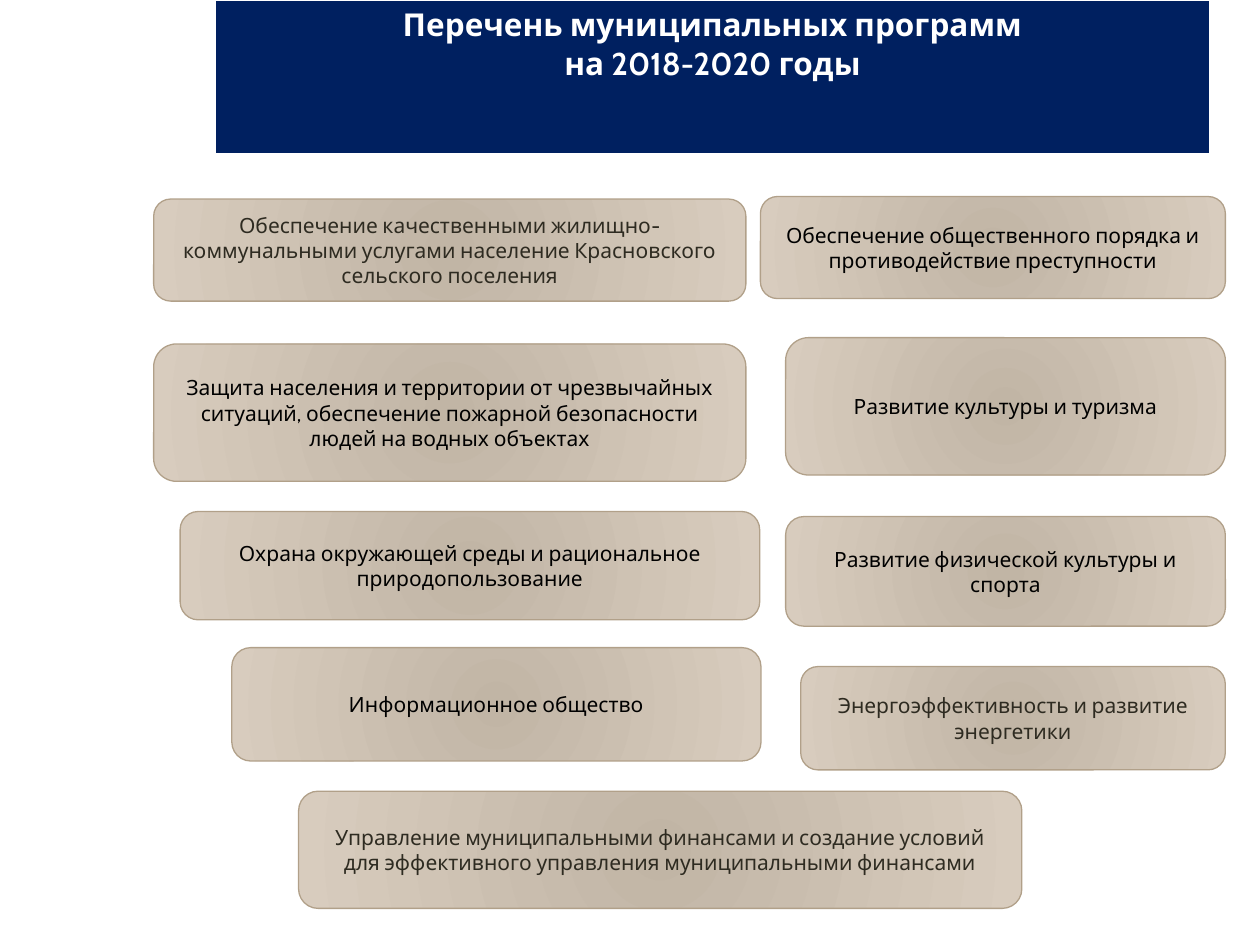
from lxml import etree
from pptx import Presentation
from pptx.dml.color import RGBColor
from pptx.enum.shapes import MSO_SHAPE
from pptx.enum.text import MSO_ANCHOR, PP_ALIGN
from pptx.oxml import parse_xml
from pptx.oxml.ns import nsdecls, qn
from pptx.util import Inches, Pt

ROUNDED = MSO_SHAPE.ROUNDED_RECTANGLE
MIDDLE = MSO_ANCHOR.MIDDLE
CENTER = PP_ALIGN.CENTER

NAVY = RGBColor(0x00, 0x20, 0x60)
WHITE = RGBColor(0xFF, 0xFF, 0xFF)
BLACK = RGBColor(0x00, 0x00, 0x00)
BROWN = RGBColor(0x2E, 0x2B, 0x21)
SAND_DARK = RGBColor(0xC1, 0xB5, 0xA5)
SAND_LIGHT = RGBColor(0xD8, 0xCC, 0xBE)
SAND_EDGE = RGBColor(0xB1, 0xA0, 0x89)

COLS, ROWS = 100, 75
FONT = "Cabin"
HEADING = "Перечень муниципальных программ\nна 2018-2020 годы"
LEFT_PROGRAMS = [
    (12.2, 15.8, 47, 8.1, BROWN, "Обеспечение качественными жилищно-коммунальными услугами "
     "население Красновского сельского поселения"),
    (12.2, 27.3, 47, 10.9, BLACK, "Защита населения и территории от чрезвычайных ситуаций, "
     "обеспечение пожарной безопасности людей на водных объектах"),
    (14.3, 40.6, 46, 8.6, BLACK, "Охрана окружающей среды и рациональное природопользование"),
    (18.4, 51.4, 42, 9, BLACK, "Информационное общество"),
]
RIGHT_EDGE = 97.25
RIGHT_PROGRAMS = [
    (15.6, 36.9, 8.1, BLACK, "Обеспечение общественного порядка и противодействие преступности"),
    (26.8, 34.9, 10.9, BLACK, "Развитие культуры и туризма"),
    (41, 34.9, 8.7, BLACK, "Развитие физической культуры и спорта"),
    (52.9, 33.7, 8.2, BROWN, "Энергоэффективность и развитие энергетики"),
]
FINANCE = (23.7, 62.8, 57.4, 9.3, BROWN, "Управление муниципальными финансами и создание условий "
           "для эффективного управления муниципальными финансами")


class Deck:
    """Holds the style and the current slide, measured on a grid of COLS by ROWS."""

    def __init__(self):
        self.prs = Presentation()
        self.prs.slide_width, self.prs.slide_height = Inches(10), Inches(7.5)
        self.s = self.prs.slides.add_slide(self.prs.slide_layouts[6])

    def box(self, x, y, w, h):
        col, row = self.prs.slide_width / COLS, self.prs.slide_height / ROWS
        return round(x * col), round(y * row), round(w * col), round(h * row)

    def set_text(self, tf, text, size, color, bold=False):
        tf.text = text
        for p in tf.paragraphs:
            p.alignment = CENTER
            for r in p.runs:
                r.font.name, r.font.size, r.font.bold = FONT, Pt(size), bold
                r.font.color.rgb = color

    def banner(self, x, y, w, h, text):
        table = self.s.shapes.add_table(1, 1, *self.box(x, y, w, h)).table
        cell = table.cell(0, 0)
        self.set_text(cell.text_frame, text, 18, WHITE, True)
        cell.fill.solid()
        cell.fill.fore_color.rgb = NAVY
        tc_pr = cell._tc.get_or_add_tcPr()
        for i, (side, width) in enumerate((("L", 1), ("R", 1), ("T", 1), ("B", 3))):
            tc_pr.insert(i, parse_xml(
                f'<a:ln{side} {nsdecls("a")} w="{Pt(width)}"><a:solidFill>'
                f'<a:srgbClr val="{WHITE}"/></a:solidFill></a:ln{side}>'))

    def program(self, x, y, w, h, color, text):
        sp = self.s.shapes.add_shape(ROUNDED, *self.box(x, y, w, h))
        sp.shadow.inherit = False
        sp.line.color.rgb, sp.line.width = SAND_EDGE, Pt(0.75)
        self.radial_fill(sp)
        sp.text_frame.vertical_anchor = MIDDLE
        self.set_text(sp.text_frame, text, 12, color)

    def radial_fill(self, sp):
        sp.fill.gradient()
        for i, (stop, color) in enumerate(zip(sp.fill.gradient_stops, (SAND_DARK, SAND_LIGHT))):
            stop.position, stop.color.rgb = i, color
        grad = sp._element.spPr.find(qn("a:gradFill"))
        grad.remove(grad.find(qn("a:lin")))
        circle = etree.SubElement(grad, qn("a:path"), {"path": "circle"})
        etree.SubElement(circle, qn("a:fillToRect"), dict.fromkeys("ltrb", "100000"))


def main():
    deck = Deck()
    deck.banner(17.1, 0, 78.9, 12.3, HEADING)
    for program in LEFT_PROGRAMS:
        deck.program(*program)
    for y, w, h, color, text in RIGHT_PROGRAMS:
        deck.program(RIGHT_EDGE - w, y, w, h, color, text)
    deck.program(*FINANCE)
    deck.prs.save("out.pptx")


if __name__ == "__main__":
    main()
